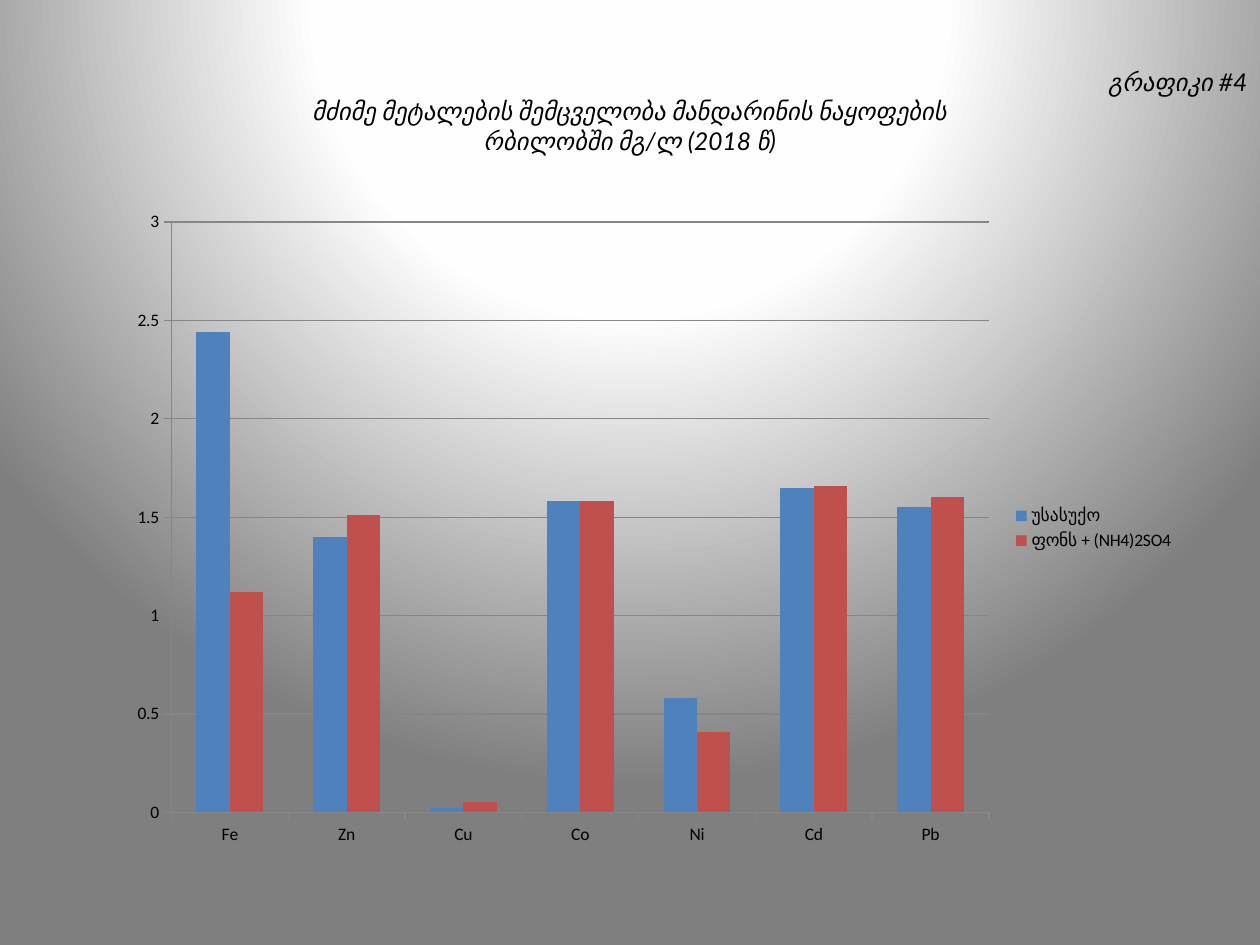
import lxml.etree
import pptx
import pptx.chart.data
import pptx.dml.color
import pptx.enum.chart
import pptx.enum.text
import pptx.oxml
import pptx.oxml.ns
import pptx.util
from pptx.util import Cm

RIGHT = pptx.enum.text.PP_ALIGN.RIGHT
CENTER = pptx.enum.text.PP_ALIGN.CENTER
HEADING = [
    ("გრაფიკი #4", RIGHT),
    ("მძიმე მეტალების შემცველობა მანდარინის ნაყოფების", CENTER),
    ("რბილობში მგ/ლ (2018 წ)", CENTER),
]
METALS = ["Fe", "Zn", "Cu", "Co", "Ni", "Cd", "Pb"]
TREATMENTS = [
    ("უსასუქო", "4F81BD", [2.44, 1.4, 0.02, 1.58, 0.58, 1.65, 1.55]),
    ("ფონს + (NH4)2SO4", "C0504D", [1.12, 1.51, 0.05, 1.58, 0.41, 1.66, 1.6]),
]
GLOW_STOPS = [(0, "FFFFFF"), (40, "FEFEFE"), (100, "7F7F7F")]
AXIS_GREY = "868686"


def color(value):
    """Return the RGB colour for a hex string."""
    return pptx.dml.color.RGBColor.from_string(value)


def set_glow_background(page):
    """Fill the page with a circular gradient centred above its top edge."""
    fill = page.background.fill
    fill.solid()
    solid = page.element.find(".//" + pptx.oxml.ns.qn("a:solidFill"))
    stops = "".join(
        f'<a:gs pos="{percent * 1000}"><a:srgbClr val="{value}"/></a:gs>'
        for percent, value in GLOW_STOPS
    )
    gradient = pptx.oxml.parse_xml(
        f'<a:gradFill {pptx.oxml.ns.nsdecls("a")} rotWithShape="1">'
        f'<a:gsLst>{stops}</a:gsLst><a:path path="circle">'
        '<a:fillToRect l="50000" t="-80000" r="50000" b="180000"/>'
        "</a:path></a:gradFill>"
    )
    solid.getparent().replace(solid, gradient)


def add_heading(page):
    """Write the chart number and heading in the title placeholder."""
    box = page.shapes.title
    box.left, box.top, box.width, box.height = Cm(0), Cm(0), Cm(25.4), Cm(4.01)
    frame = box.text_frame
    frame.word_wrap = True
    frame.auto_size = pptx.enum.text.MSO_AUTO_SIZE.NONE
    frame.vertical_anchor = pptx.enum.text.MSO_ANCHOR.TOP
    frame.margin_top = Cm(1.35)
    frame.text = "\n".join(text for text, _ in HEADING)
    for para, (_, alignment) in zip(frame.paragraphs, HEADING):
        para.alignment = alignment
        para.font.name = "Lato"
        para.font.size = pptx.util.Pt(14)
        para.font.italic = True
        para.font.color.rgb = color("000000")


def style_axis(axis):
    """Give an axis a grey line and outward ticks."""
    axis.major_tick_mark = pptx.enum.chart.XL_TICK_MARK.OUTSIDE
    axis.minor_tick_mark = pptx.enum.chart.XL_TICK_MARK.NONE
    axis.format.line.color.rgb = color(AXIS_GREY)


def add_metal_chart(page):
    """Add the clustered columns of metal content by treatment."""
    data = pptx.chart.data.CategoryChartData()
    data.categories = METALS
    for name, _, values in TREATMENTS:
        data.add_series(name, values)
    chart = page.shapes.add_chart(
        pptx.enum.chart.XL_CHART_TYPE.COLUMN_CLUSTERED,
        Cm(2.34), Cm(4.01), Cm(21.59), Cm(13.28), data,
    ).chart
    chart.has_title = False
    chart.font.name = "Calibri"
    chart.font.size = pptx.util.Pt(10)
    chart.font.color.rgb = color("000000")
    chart.has_legend = True
    chart.legend.position = pptx.enum.chart.XL_LEGEND_POSITION.RIGHT
    chart.legend.include_in_layout = False
    style_axis(chart.category_axis)
    style_axis(chart.value_axis)
    chart.value_axis.minimum_scale = 0
    chart.value_axis.maximum_scale = 3
    chart.value_axis.major_unit = 0.5
    chart.value_axis.has_major_gridlines = True
    chart.value_axis.major_gridlines.format.line.color.rgb = color(AXIS_GREY)
    plot = chart.plots[0]
    plot.gap_width = 150
    plot.vary_by_categories = False
    for series, (_, value, _) in zip(plot.series, TREATMENTS):
        series.format.fill.solid()
        series.format.fill.fore_color.rgb = color(value)


def main():
    """Build and save the one-page deck."""
    deck = pptx.Presentation()
    deck.slide_width, deck.slide_height = Cm(25.4), Cm(19.05)
    page = deck.slides.add_slide(deck.slide_layouts.get_by_name("Title Only"))
    set_glow_background(page)
    add_heading(page)
    add_metal_chart(page)
    deck.save("out.pptx")


if __name__ == "__main__":
    main()
